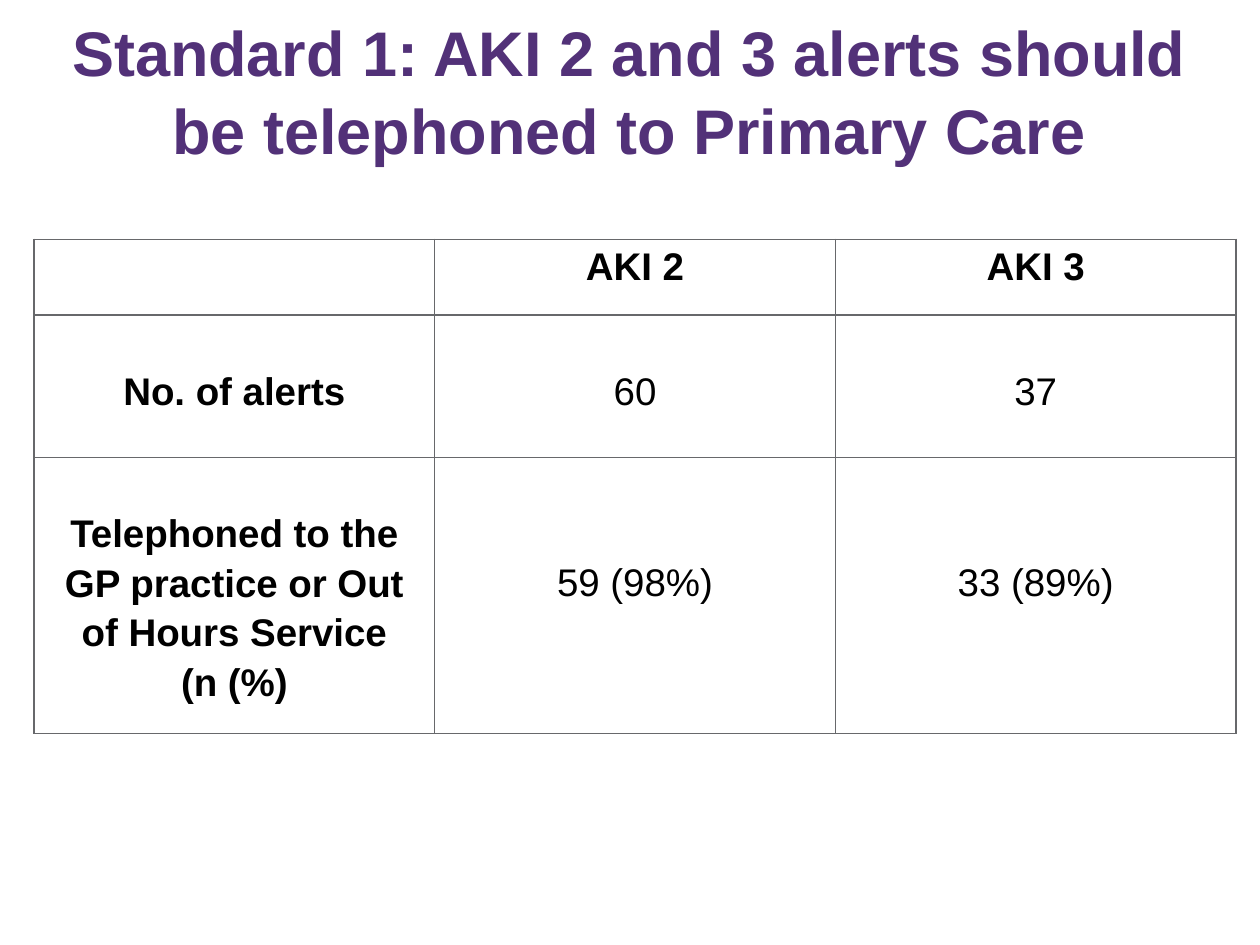
from typing import NamedTuple

from lxml import etree
from pptx import Presentation
from pptx import util as u
from pptx.dml.color import RGBColor
from pptx.enum import text
from pptx.oxml.ns import qn

WIDTH, HEIGHT = u.Inches(10), u.Inches(7.5)
COLOURS = {"title": "523178", "text": "000000", "border": "67686B", "cell": "FFFFFF"}
FONT = "Arial"
LINE = u.Inches(0.39)  # height of one line of table text
COLUMN = u.Inches(3.18)


class Row(NamedTuple):
    height: float  # inches
    label: str
    values: tuple[str, ...]
    label_drop: int  # lines left free above the label
    value_drop: int  # lines left free above the values
    heading: bool = False


ROWS = (
    Row(0.6, "", ("AKI 2", "AKI 3"), 0, 0, heading=True),
    Row(1.13, "No. of alerts", ("60", "37"), 1, 1),
    Row(2.19, "Telephoned to the GP practice or Out of Hours Service\n(n (%)",
        ("59 (98%)", "33 (89%)"), 1, 2),
)


def write(frame, wording: str, size: float, colour: str, bold: bool, spacing: float) -> None:
    frame.text = wording
    for paragraph in frame.paragraphs:
        paragraph.alignment = text.PP_ALIGN.CENTER
        paragraph.line_spacing = spacing
        for run in paragraph.runs:
            run.font.name = FONT
            run.font.size = u.Pt(size)
            run.font.bold = bold
            run.font.color.rgb = RGBColor.from_string(COLOURS[colour])


def add_borders(cell) -> None:
    properties = cell._tc.get_or_add_tcPr()
    for side in ("a:lnL", "a:lnR", "a:lnT", "a:lnB"):
        line = etree.SubElement(properties, qn(side), w=str(u.Pt(1)))
        fill = etree.SubElement(line, qn("a:solidFill"))
        etree.SubElement(fill, qn("a:srgbClr"), val=COLOURS["border"])


def fill_cell(cell, wording: str, bold: bool, drop: int) -> None:
    cell.margin_left = cell.margin_right = u.Inches(0.07)
    cell.margin_top, cell.margin_bottom = drop * LINE, 0
    add_borders(cell)
    cell.fill.solid()
    cell.fill.fore_color.rgb = RGBColor.from_string(COLOURS["cell"])
    write(cell.text_frame, wording, 22, "text", bold, 1.15)


def add_title(slide, wording: str) -> None:
    box = slide.shapes.add_textbox(u.Inches(0.18), 0, u.Inches(9.63), u.Inches(0.88))
    frame = box.text_frame
    frame.word_wrap = True
    frame.vertical_anchor = text.MSO_ANCHOR.TOP
    frame.margin_top = u.Inches(0.08)
    write(frame, wording, 36, "title", True, 1.04)


def add_alert_table(slide, rows: tuple[Row, ...]) -> None:
    columns = 1 + len(rows[0].values)
    height = u.Inches(sum(row.height for row in rows))
    table = slide.shapes.add_table(len(rows), columns, u.Inches(0.27), u.Inches(1.9),
                                   columns * COLUMN, height).table
    for column in table.columns:
        column.width = COLUMN
    for index, row in enumerate(rows):
        table.rows[index].height = u.Inches(row.height)
        fill_cell(table.cell(index, 0), row.label, True, row.label_drop)
        for position, value in enumerate(row.values, start=1):
            fill_cell(table.cell(index, position), value, row.heading, row.value_drop)


def main() -> None:
    deck = Presentation()
    deck.slide_width, deck.slide_height = WIDTH, HEIGHT
    slide = deck.slides.add_slide(deck.slide_layouts[6])
    add_title(slide, "Standard 1: AKI 2 and 3 alerts should be telephoned to Primary Care")
    add_alert_table(slide, ROWS)
    deck.save("out.pptx")


if __name__ == "__main__":
    main()
